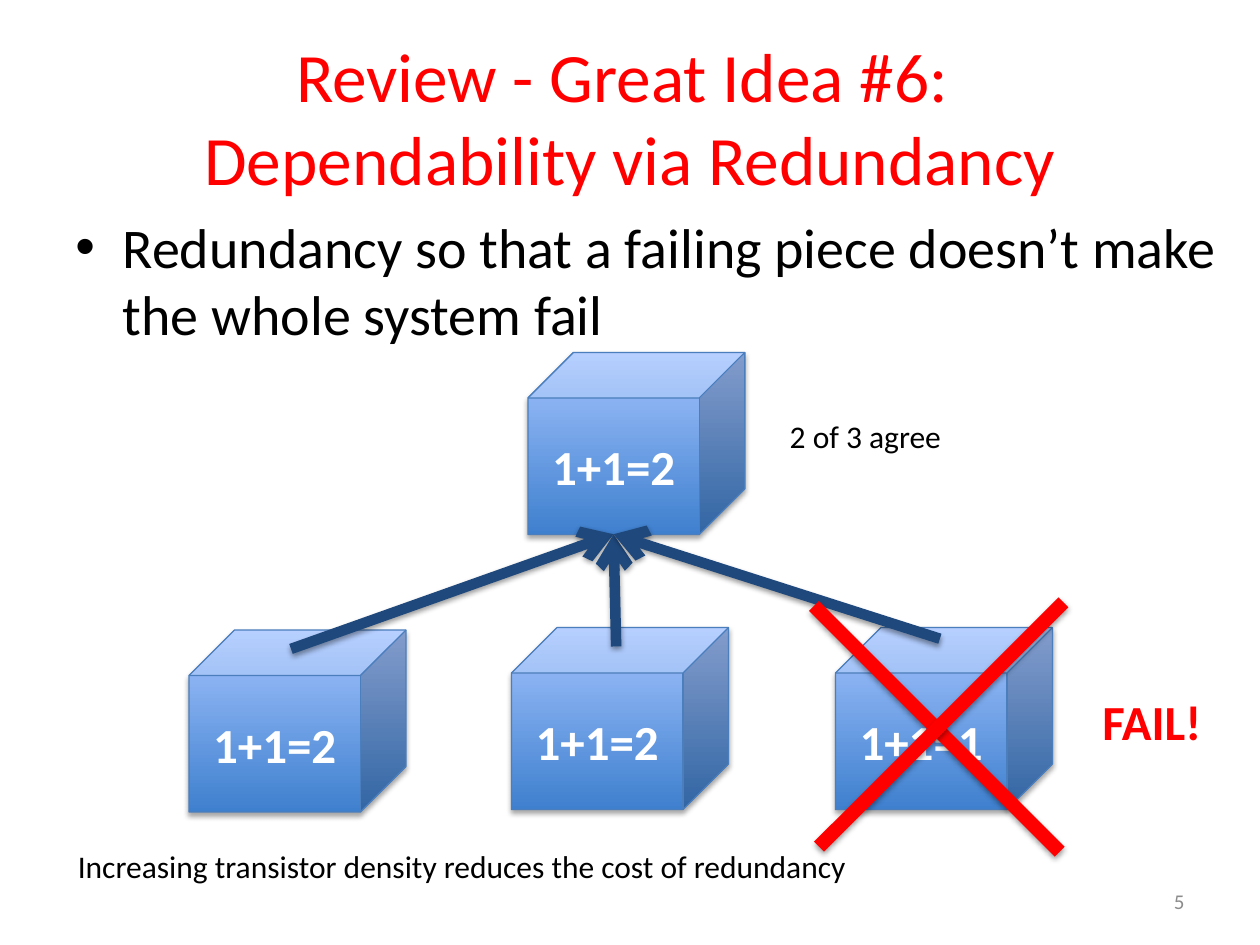
import pptx
import pptx.dml.color
import pptx.enum.dml
import pptx.enum.shapes
import pptx.enum.text
import pptx.oxml
import pptx.oxml.ns
import pptx.util

Pt = pptx.util.Pt
RGBColor = pptx.dml.color.RGBColor
Align = pptx.enum.text.PP_ALIGN
Anchor = pptx.enum.text.MSO_ANCHOR
namespace = pptx.oxml.ns.nsdecls("a")

theme = {
    "font": "Calibri",
    "black": RGBColor.from_string("000000"),
    "white": RGBColor.from_string("FFFFFF"),
    "red": RGBColor.from_string("FF0000"),
    "grey": RGBColor.from_string("8C8C8C"),
    "navy": RGBColor.from_string("1F497D"),
    "cube_edge": RGBColor.from_string("4B7EBC"),
    "cube_dark": RGBColor.from_string("3F80CE"),
    "cube_light": RGBColor.from_string("A4C4FF"),
    "title_size": 39.6,
    "body_size": 32,
    "label_size": 28,
    "note_size": 18,
    "number_size": 12,
}


def write(shape, text, size, color, bold=False, align=Align.LEFT, anchor=Anchor.TOP, wrap=True):
    frame = shape.text_frame
    frame_format = {
        "text": text,
        "word_wrap": wrap,
        "vertical_anchor": anchor,
        "auto_size": pptx.enum.text.MSO_AUTO_SIZE.NONE,
    }
    for name, value in frame_format.items():
        setattr(frame, name, value)
    paragraph = frame.paragraphs[0]
    paragraph.alignment = align
    font_format = {"name": theme["font"], "size": Pt(theme[size]), "bold": bold}
    for run in paragraph.runs:
        for name, value in font_format.items():
            setattr(run.font, name, value)
        run.font.color.rgb = theme[color]
    return paragraph


def add_shadow(shape, distance, opacity):
    """Give the shape a soft black shadow straight below it."""
    shape._element.spPr.append(pptx.oxml.parse_xml(
        f'<a:effectLst {namespace}><a:outerShdw blurRad="{Pt(3.1)}" dist="{Pt(distance)}" '
        f'dir="5400000" rotWithShape="0"><a:srgbClr val="000000">'
        f'<a:alpha val="{opacity * 1000}"/></a:srgbClr></a:outerShdw></a:effectLst>'))


presentation = pptx.Presentation()
presentation.slide_width, presentation.slide_height = Pt(720), Pt(540)
slide = presentation.slides.add_slide(presentation.slide_layouts[5])
shapes = slide.shapes

# Title
title = shapes.title
title_place = {"left": 36, "top": 21.6, "width": 648, "height": 90}
for name, value in title_place.items():
    setattr(title, name, Pt(value))
write(title, "Review - Great Idea #6: \vDependability via Redundancy",
      "title_size", "red", align=Align.CENTER, anchor=Anchor.MIDDLE)

# Bulleted statement
body = shapes.add_textbox(Pt(36), Pt(118), Pt(666.7), Pt(95))
paragraph = write(body, "Redundancy so that a failing piece doesn’t make the whole system fail",
                  "body_size", "black")
properties = paragraph._p.get_or_add_pPr()
properties.set("marL", str(Pt(27)))
properties.set("indent", str(Pt(-27)))
for bullet in ('<a:buFont {} typeface="Arial"/>', '<a:buChar {} char="•"/>'):
    properties.append(pptx.oxml.parse_xml(bullet.format(namespace)))

# Slide number
number = shapes.add_textbox(Pt(516), Pt(500.5), Pt(168), Pt(28.75))
write(number, "5", "number_size", "grey", align=Align.RIGHT, anchor=Anchor.MIDDLE)

# Three redundant units, and the voter above them
cubes = [
    (108, 360, "1+1=2"),
    (292.3, 358.6, "1+1=2"),
    (477.4, 358.6, "1+1=1"),
    (301.7, 201.4, "1+1=2"),
]
for left, top, equation in cubes:
    cube = shapes.add_shape(pptx.enum.shapes.MSO_SHAPE.CUBE,
                            Pt(left), Pt(top), Pt(124), Pt(104))
    cube.fill.gradient()
    cube.fill.gradient_angle = 90
    for stop, position, color in zip(cube.fill.gradient_stops, (0, 1), ("cube_dark", "cube_light")):
        stop.position = position
        stop.color.rgb = theme[color]
    cube.line.color.rgb = theme["cube_edge"]
    cube.line.width = Pt(0.75)
    add_shadow(cube, 1.8, 35)
    write(cube, equation, "label_size", "white", bold=True,
          align=Align.CENTER, anchor=Anchor.MIDDLE)

# Arrows to the voter, then the cross over the failing unit
voter = (350.6, 305.3)
lines = [
    ((166.3, 370.8), voter, "navy", 6, True),
    ((352.1, 369.4), voter, "navy", 6, True),
    ((537.1, 365), voter, "navy", 6, True),
    ((465.1, 346.3), (605.5, 486.7), "red", 8, False),
    ((607.7, 344.2), (468, 483.8), "red", 8, False),
]
for start, end, color, width, has_arrow in lines:
    line = shapes.add_connector(pptx.enum.shapes.MSO_CONNECTOR.STRAIGHT,
                                *(Pt(value) for value in start + end))
    line.line.color.rgb = theme[color]
    line.line.width = Pt(width)
    if has_arrow:
        line.line._get_or_add_ln().append(
            pptx.oxml.parse_xml(f'<a:tailEnd {namespace} type="arrow"/>'))
    add_shadow(line, 1.6, 38)

# Notes beside and below the diagram
notes = [
    ((444.2, 234.9, 101.5, 29), "2 of 3 agree", "note_size", "black", False),
    ((622.8, 391.7, 72, 41), "FAIL!", "label_size", "red", True),
    ((37.4, 480.2, 458, 29), "Increasing transistor density reduces the cost of redundancy",
     "note_size", "black", False),
]
for place, text, size, color, bold in notes:
    note = shapes.add_textbox(*(Pt(value) for value in place))
    write(note, text, size, color, bold=bold, wrap=False)

presentation.save("out.pptx")
